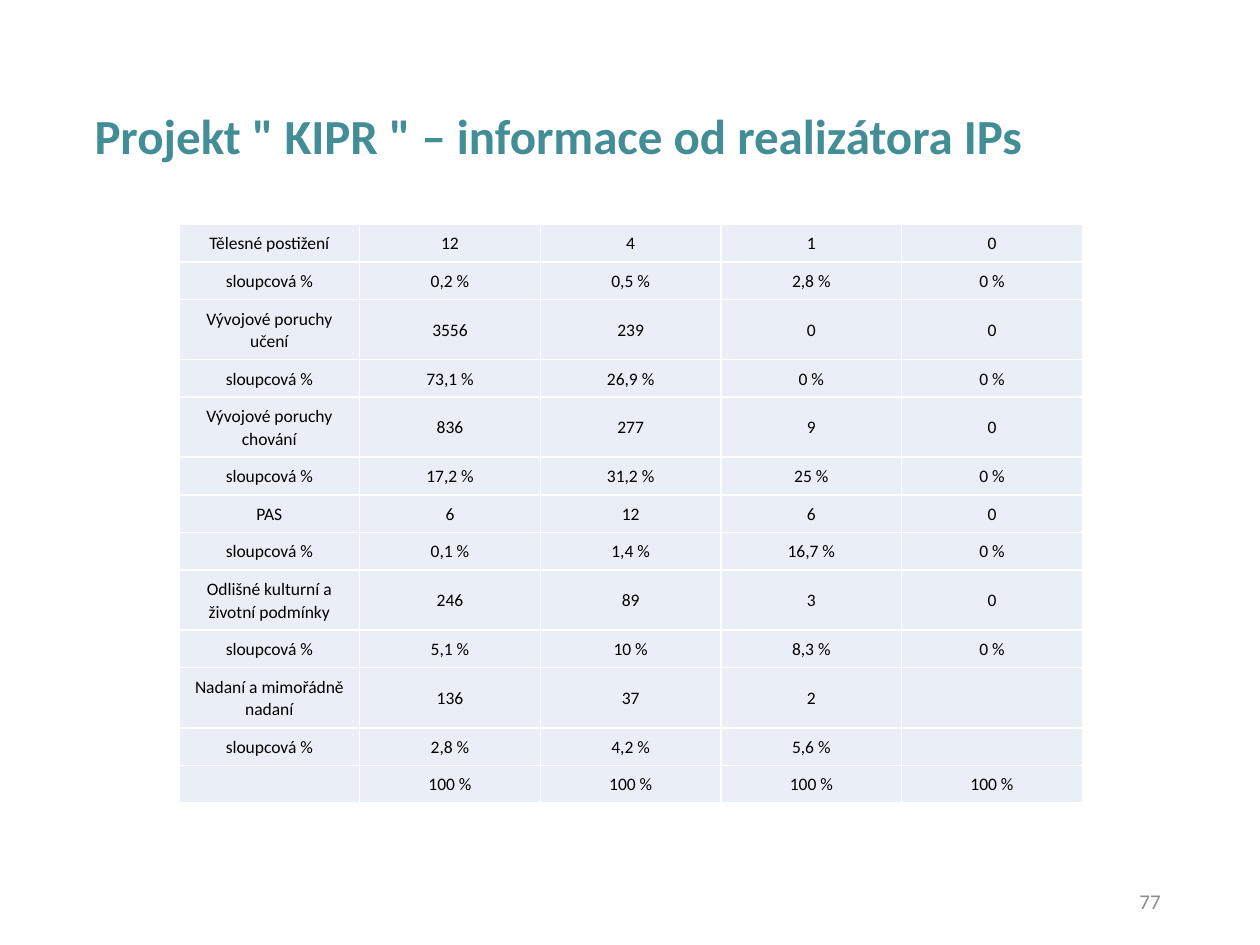
import pptx
import pptx.util
import pptx.dml.color
import pptx.enum.text
import pptx.oxml
import pptx.oxml.ns

TITLE = "Projekt \" KIPR \" – informace od realizátora IPs"
PAGE_NUMBER = "77"
SHARE = "sloupcová %"
ROWS = [
    ("Tělesné postižení", "12", "4", "1", "0"),
    (SHARE, "0,2 %", "0,5 %", "2,8 %", "0 %"),
    ("Vývojové poruchy učení", "3556", "239", "0", "0"),
    (SHARE, "73,1 %", "26,9 %", "0 %", "0 %"),
    ("Vývojové poruchy chování", "836", "277", "9", "0"),
    (SHARE, "17,2 %", "31,2 %", "25 %", "0 %"),
    ("PAS", "6", "12", "6", "0"),
    (SHARE, "0,1 %", "1,4 %", "16,7 %", "0 %"),
    ("Odlišné kulturní a životní podmínky", "246", "89", "3", "0"),
    (SHARE, "5,1 %", "10 %", "8,3 %", "0 %"),
    ("Nadaní a mimořádně nadaní", "136", "37", "2", ""),
    (SHARE, "2,8 %", "4,2 %", "5,6 %", ""),
    ("", "100 %", "100 %", "100 %", "100 %"),
]
TABLE_LEFT, TABLE_TOP, TABLE_WIDTH = 1.42, 1.78, 7.17
SINGLE_HEIGHT, DOUBLE_HEIGHT = 0.29, 0.47
WRAP_LENGTH = 20
MARGIN = 0.06
FONT = "Calibri"

Inches = pptx.util.Inches
ALIGN = pptx.enum.text.PP_ALIGN
MIDDLE = pptx.enum.text.MSO_ANCHOR.MIDDLE
TOP = pptx.enum.text.MSO_ANCHOR.TOP


def color(value):
    return pptx.dml.color.RGBColor.from_string(value)


def write(paragraph, text, size, text_color, align, bold=False):
    paragraph.alignment = align
    run = paragraph.add_run()
    run.text = text
    run.font.name = FONT
    run.font.size = pptx.util.Pt(size)
    run.font.bold = bold
    run.font.color.rgb = color(text_color)


def set_margins(box):
    box.margin_left = box.margin_right = Inches(MARGIN)
    box.margin_top = box.margin_bottom = Inches(MARGIN)


def add_text_frame(slide, left, top, width, height):
    shape = slide.shapes.add_textbox(*map(Inches, (left, top, width, height)))
    frame = shape.text_frame
    frame.word_wrap = True
    frame.vertical_anchor = MIDDLE
    return frame


def add_borders(cell, line_color, points):
    properties = cell._tc.get_or_add_tcPr()
    for side in ("lnL", "lnR", "lnT", "lnB"):
        properties.append(pptx.oxml.parse_xml(
            f'<a:{side} {pptx.oxml.ns.nsdecls("a")} w="{pptx.util.Pt(points)}">'
            f'<a:solidFill><a:srgbClr val="{line_color}"/></a:solidFill></a:{side}>'))


def fill_cell(cell, text, anchor):
    set_margins(cell)
    cell.vertical_anchor = anchor
    add_borders(cell, "FFFFFF", 1)
    cell.fill.solid()
    cell.fill.fore_color.rgb = color("EAEFF7")
    paragraph = cell.text_frame.paragraphs[0]
    paragraph.line_spacing = 1.07
    if text:
        write(paragraph, text, 10, "000000", ALIGN.CENTER)
    else:
        paragraph._p.append(pptx.oxml.parse_xml(
            f'<a:endParaRPr {pptx.oxml.ns.nsdecls("a")} sz="1000"/>'))


def add_results_table(slide):
    heights = [DOUBLE_HEIGHT if len(row[0]) > WRAP_LENGTH else SINGLE_HEIGHT for row in ROWS]
    column_count = len(ROWS[0])
    table = slide.shapes.add_table(
        len(ROWS), column_count, Inches(TABLE_LEFT), Inches(TABLE_TOP),
        Inches(TABLE_WIDTH), Inches(sum(heights))).table
    table.first_row = False
    table.horz_banding = False
    for column in table.columns:
        column.width = Inches(TABLE_WIDTH / column_count)
    for row_index, (values, height) in enumerate(zip(ROWS, heights)):
        table.rows[row_index].height = Inches(height)
        for column_index, text in enumerate(values):
            fill_cell(table.cell(row_index, column_index), text, MIDDLE if column_index else TOP)


def main():
    presentation = pptx.Presentation()
    presentation.slide_width = Inches(10)
    presentation.slide_height = Inches(7.5)
    slide = presentation.slides.add_slide(presentation.slide_layouts[6])

    title_frame = add_text_frame(slide, 0.69, 0.61, 8.62, 0.98)
    set_margins(title_frame)
    title = title_frame.paragraphs[0]
    title.line_spacing = 0.9
    write(title, TITLE, 28, "428D96", ALIGN.LEFT, bold=True)
    properties = title._p.get_or_add_pPr()
    properties.set("marL", str(Inches(0.62)))
    properties.set("indent", str(Inches(-0.62)))

    add_results_table(slide)

    number_frame = add_text_frame(slide, 7.06, 6.95, 2.25, 0.4)
    write(number_frame.paragraphs[0], PAGE_NUMBER, 12, "8C8C8C", ALIGN.RIGHT)
    presentation.save("out.pptx")


if __name__ == "__main__":
    main()
